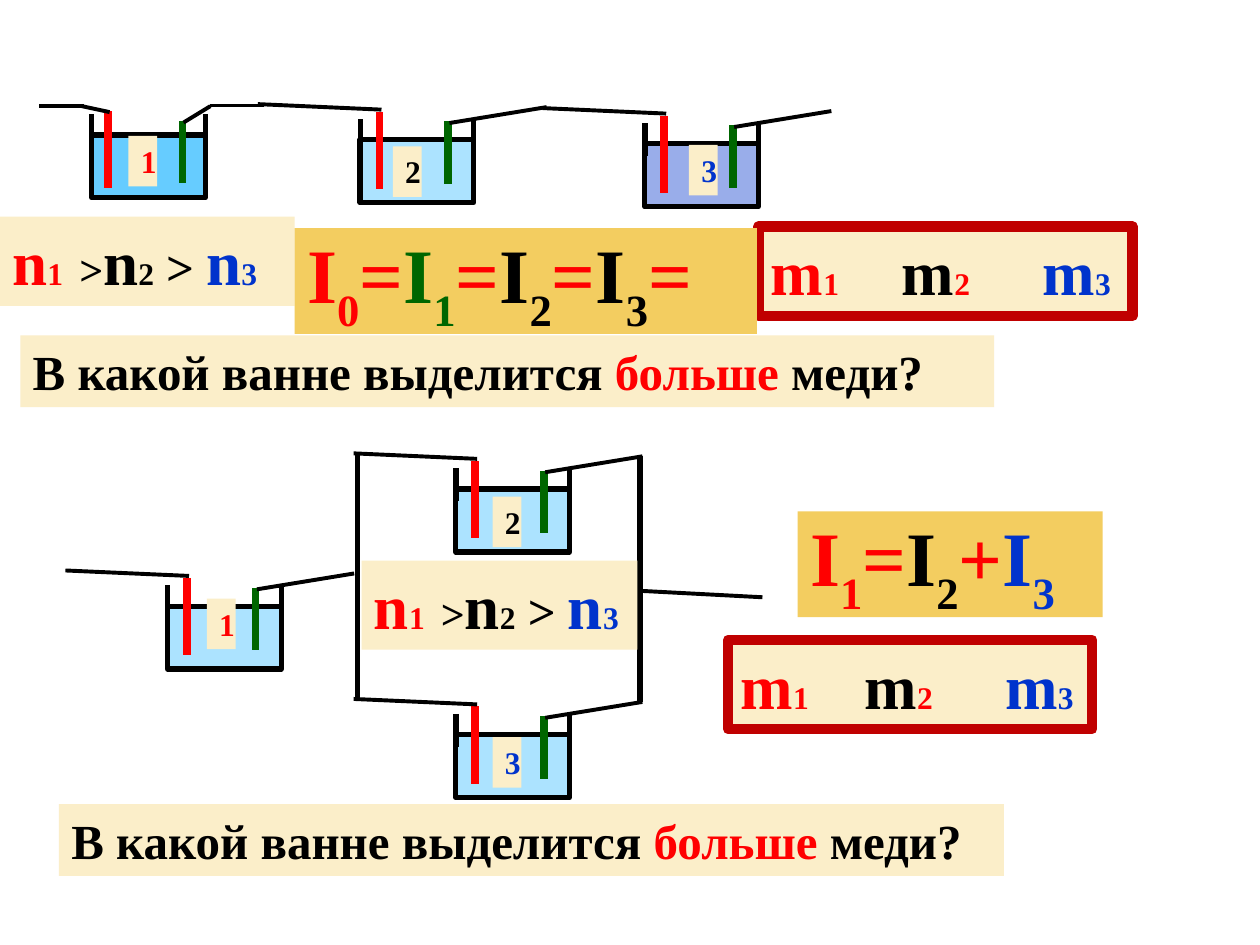
from dataclasses import dataclass

from lxml import etree
from pptx import Presentation
from pptx.dml.color import RGBColor
from pptx.enum import shapes, text
from pptx.oxml import ns
from pptx.util import Cm, Pt


@dataclass(frozen=True)
class Theme:
    font: str = "Times New Roman"
    black: str = "000000"
    red: str = "FF0000"
    green: str = "006600"
    blue: str = "0033CC"
    water: str = "66CCFF"
    cream: str = "FBEEC9"
    gold: str = "F3CD60"
    frame: str = "C00000"
    current: int = 44
    letter: int = 36
    body: int = 28
    sign: int = 24
    small: int = 18
    thin: float = 1.5
    wire: float = 2.25
    wall: float = 3
    electrode: float = 4.5
    border: float = 6


T = Theme()
prs = Presentation()
prs.slide_width, prs.slide_height = Cm(25.4), Cm(19.05)
s = prs.slides.add_slide(prs.slide_layouts[6])


def add_line(parent, x1, y1, x2, y2, width, color=T.black):
    c = parent.add_connector(shapes.MSO_CONNECTOR.STRAIGHT, Cm(x1), Cm(y1), Cm(x2), Cm(y2))
    c.line.color.rgb = RGBColor.from_string(color)
    c.line.width = Pt(width)
    etree.SubElement(c._element.spPr, ns.qn("a:effectLst"))


def add_box(x, y, w, h, runs, fill=T.cream, border=None, tabs=(), anchor=text.MSO_ANCHOR.TOP):
    sp = s.shapes.add_textbox(Cm(x), Cm(y), Cm(w), Cm(h))
    sp.fill.solid()
    sp.fill.fore_color.rgb = RGBColor.from_string(fill)
    if border:
        sp.line.color.rgb = RGBColor.from_string(border)
        sp.line.width = Pt(T.border)
    tf = sp.text_frame
    tf.word_wrap = True
    tf.vertical_anchor = anchor
    p = tf.paragraphs[0]
    p.font.name, p.font.bold = T.font, True
    if tabs:
        stops = etree.Element(ns.qn("a:tabLst"))
        for pos in tabs:
            etree.SubElement(stops, ns.qn("a:tab"), pos=str(Cm(pos)), algn="l")
        p._p.get_or_add_pPr().insert(0, stops)
    for words, size, color, *base in runs:
        r = p.add_run()
        r.text = words
        r.font.size = Pt(size)
        r.font.color.rgb = RGBColor.from_string(color)
        if base:
            r.font._element.set("baseline", str(base[0] * 1000))


standard = dict(
    red=(0.39, -0.57, 0.99), red_wire=(0.43, -0.61, -2.06, -0.72),
    green=(1.77, -0.37, 0.89), green_wire=(1.8, -0.34, 3.76, -0.66),
)
compact = dict(
    red=(0.33, -0.48, 1.07), red_wire=(0.36, -0.46, -0.2, -0.58),
    green=(1.83, -0.28, 0.97), green_wire=(1.85, -0.25, 2.39, -0.58),
)
baths = [
    (1.85, 2.72, T.water, 100, compact),
    (7.26, 2.82, T.water, 54, standard),
    (13, 2.9, T.blue, 40, standard),
    (3.38, 12.22, T.water, 54, standard),
    (9.19, 9.86, T.water, 54, standard),
    (9.19, 14.81, T.water, 54, standard),
]
for x, y, color, alpha, parts in baths:
    bath = s.shapes.add_group_shape().shapes
    sp = bath.add_shape(shapes.MSO_SHAPE.RECTANGLE, Cm(x), Cm(y), Cm(2.29), Cm(1.27))
    sp.shadow.inherit = False
    sp.fill.solid()
    sp.fill.fore_color.rgb = RGBColor.from_string(color)
    if alpha < 100:
        rgb = sp._element.spPr.find(".//" + ns.qn("a:srgbClr"))
        etree.SubElement(rgb, ns.qn("a:alpha"), val=str(alpha * 1000))
    sp.line.color.rgb = RGBColor.from_string(T.black)
    sp.line.width = Pt(T.wall)
    for dx in (0, 2.29):
        add_line(bath, x + dx, y - 0.42, x + dx, y + 0.24, T.wall)
    for name, ink in (("red", T.red), ("green", T.green)):
        dx, top, bottom = parts[name]
        add_line(bath, x + dx, y + top, x + dx, y + bottom, T.electrode, ink)
        x1, y1, x2, y2 = parts[name + "_wire"]
        add_line(bath, x + x1, y + y1, x + x2, y + y2, T.wire)

for wire in [
    (1.7, 2.13, 0.79, 2.13, T.wire),
    (5.33, 2.13, 4.24, 2.13, T.thin),
    (7.21, 9.14, 7.21, 14.1, T.wall),
    (12.9, 9.19, 12.9, 14.15, T.wall),
    (15.37, 12.04, 12.9, 11.91, T.wire),
]:
    add_line(s.shapes, *wire)

for x, y, number, color in [
    (2.59, 2.74, "1", T.red), (7.92, 2.95, "2", T.black), (13.89, 2.92, "3", T.blue),
    (4.17, 12.07, "1", T.red), (9.93, 10.01, "2", T.black), (9.93, 14.86, "3", T.blue),
]:
    add_box(x, y, 0.58, 1.02, [(number, T.small, color)])

amounts = [
    ("n", T.letter, T.red), ("1\t", T.small, T.red), (">", T.sign, T.black),
    ("n", T.letter, T.black), ("2", T.small, T.black), (" > ", T.body, T.black),
    ("n", T.letter, T.blue), ("3", T.small, T.blue),
]
for x, y, w in [(0, 4.37, 5.94), (7.29, 11.3, 5.56)]:
    add_box(x, y, w, 1.8, amounts, tabs=[1.35])

question = [
    ("В какой ванне выделится ", T.body, T.black),
    ("больше", T.body, T.red),
    (" меди?", T.body, T.black),
]
for x, y, w in [(0.41, 6.76, 19.63), (1.19, 16.21, 19.05)]:
    add_box(x, y, w, 1.45, question)

masses = [
    ("m", T.letter, T.red), ("1\t", T.small, T.red),
    ("m", T.letter, T.black), ("2\t", T.small, T.red),
    ("m", T.letter, T.blue), ("3", T.small, T.blue),
]
for x, y, w, tabs in [(14.68, 12.9, 7.34, (2.5, 5.34)), (15.29, 4.57, 7.54, (2.64, 5.48))]:
    add_box(x, y, w, 1.8, masses, border=T.frame, tabs=tabs)

branched = [("I", "1", T.red, "=", T.red), ("I", "2", T.black, "+", T.red), ("I", "3", T.blue, "", T.red)]
series = [
    ("I", "0", T.red, "=", T.red), ("I", "1", T.green, "=", T.red),
    ("I", "2", T.black, "=", T.red), ("I", "3", T.black, "=", T.red),
]
for x, y, w, terms in [(16.08, 10.31, 6.15, branched), (5.94, 4.6, 9.32, series)]:
    runs = []
    for symbol, index, color, sign, sign_color in terms:
        runs += [(symbol, T.current, color), (index, T.current, color, -30)]
        if sign:
            runs.append((sign, T.current, sign_color))
    add_box(x, y, w, 2.13, runs, fill=T.gold, anchor=text.MSO_ANCHOR.MIDDLE)

prs.save("out.pptx")
